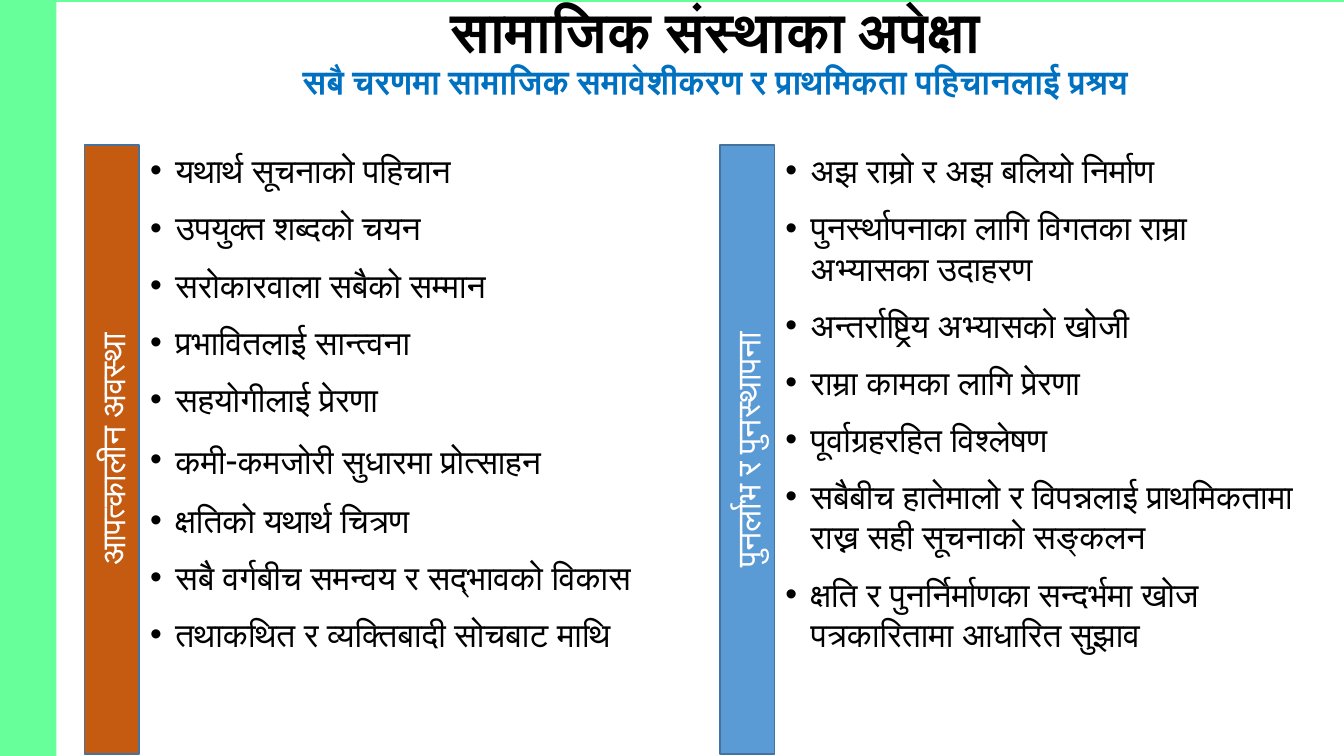
from lxml import etree
from pptx import Presentation
from pptx.dml.color import RGBColor
from pptx.enum import shapes, text
from pptx.oxml import ns
from pptx.util import Inches, Pt

COLORS = {
    "green": "66FF99",
    "orange": "C55A11",
    "blue": "5B9BD5",
    "outline": "43739E",
    "subtitle": "0070C0",
    "black": "000000",
    "white": "FFFFFF",
}
SLIDE_WIDTH, SLIDE_HEIGHT = 13.33, 7.5
BAR_WIDTH = 0.54
COLUMN_TOP, COLUMN_HEIGHT = 1.44, 6.04

EMERGENCY = [
    "यथार्थ सूचनाको पहिचान",
    "उपयुक्त शब्दको चयन",
    "सरोकारवाला सबैको सम्मान",
    "प्रभावितलाई सान्त्वना",
    "सहयोगीलाई प्रेरणा",
    "कमी-कमजोरी सुधारमा प्रोत्साहन",
    "क्षतिको यथार्थ चित्रण",
    "सबै वर्गबीच समन्वय र सद्भावको विकास",
    "तथाकथित र व्यक्तिबादी सोचबाट माथि",
]
RECOVERY = [
    "अझ राम्रो र अझ बलियो निर्माण",
    "पुनर्स्थापनाका लागि विगतका राम्रा अभ्यासका उदाहरण",
    "अन्तर्राष्ट्रिय अभ्यासको खोजी",
    "राम्रा कामका लागि प्रेरणा",
    "पूर्वाग्रहरहित विश्लेषण",
    "सबैबीच हातेमालो र विपन्नलाई प्राथमिकतामा राख्न सही सूचनाको सङ्कलन",
    "क्षति र पुनर्निर्माणका सन्दर्भमा खोज पत्रकारितामा आधारित सुझाव",
]


def color(name):
    return RGBColor.from_string(COLORS[name])


def place(shape, left, top, width, height):
    shape.left, shape.top = Inches(left), Inches(top)
    shape.width, shape.height = Inches(width), Inches(height)


def add_span(para, words, size, font, tint, bold=False):
    span = para.add_run()
    span.text = words
    span.font.size = Pt(size)
    span.font.name = font
    span.font.bold = bold
    span.font.color.rgb = color(tint)
    script_font = etree.SubElement(span.font._element, ns.qn("a:cs"))
    script_font.set("typeface", font)


def add_block(page, left, top, width, height, fill):
    block = page.shapes.add_shape(
        shapes.MSO_SHAPE.RECTANGLE,
        Inches(left), Inches(top), Inches(width), Inches(height),
    )
    block.shadow.inherit = False
    block.fill.solid()
    block.fill.fore_color.rgb = color(fill)
    block.line.fill.background()
    return block


def add_frame(page):
    add_block(page, 0, 0, 0.56, SLIDE_HEIGHT, "green")
    add_block(page, 0, 0, SLIDE_WIDTH, 0.02, "green")


def add_heading(page, left, top, width, height):
    heading = page.shapes.title
    place(heading, left, top, width, height)
    frame = heading.text_frame
    frame.word_wrap = True
    frame.auto_size = text.MSO_AUTO_SIZE.NONE
    frame.vertical_anchor = text.MSO_ANCHOR.MIDDLE
    para = frame.paragraphs[0]
    para.alignment = text.PP_ALIGN.CENTER
    para.line_spacing = 0.9
    add_span(para, "सामाजिक संस्थाका अपेक्षा", 40, "Lato", "black", True)
    para.add_line_break()
    add_span(para, "सबै चरणमा सामाजिक समावेशीकरण र प्राथमिकता पहिचानलाई प्रश्रय",
             24, "Lato", "subtitle", True)


def add_side_bar(page, left, top, width, height, label, fill):
    bar = add_block(page, left + (width - height) / 2, top + (height - width) / 2,
                    height, width, fill)
    bar.rotation = 270
    bar.line.color.rgb = color("outline")
    bar.line.width = Pt(1)
    bar.text_frame.vertical_anchor = text.MSO_ANCHOR.MIDDLE
    para = bar.text_frame.paragraphs[0]
    para.alignment = text.PP_ALIGN.CENTER
    add_span(para, label, 24, "Calibri", "white")


def add_bullet(para):
    properties = para._p.get_or_add_pPr()
    properties.set("marL", str(Inches(0.25)))
    properties.set("indent", str(-Inches(0.25)))
    font = etree.SubElement(properties, ns.qn("a:buFont"))
    font.set("typeface", "Arial")
    bullet = etree.SubElement(properties, ns.qn("a:buChar"))
    bullet.set("char", "•")


def fill_list(body, left, top, width, height, items):
    place(body, left, top, width, height)
    frame = body.text_frame
    frame.word_wrap = True
    frame.auto_size = text.MSO_AUTO_SIZE.NONE
    frame.vertical_anchor = text.MSO_ANCHOR.TOP
    for number, item in enumerate(items):
        para = frame.add_paragraph() if number else frame.paragraphs[0]
        add_bullet(para)
        para.space_before = Pt(12 if number else 0)
        start, hyphen, rest = item.partition("-")
        add_span(para, start, 24, "Lato", "black")
        if hyphen:
            add_span(para, hyphen, 28, "Calibri", "black")
            add_span(para, rest, 24, "Lato", "black")


def add_column(page, body, left, width, label, fill, items):
    add_side_bar(page, left, COLUMN_TOP, BAR_WIDTH, COLUMN_HEIGHT, label, fill)
    fill_list(body, left + BAR_WIDTH + 0.01, COLUMN_TOP,
              width - BAR_WIDTH - 0.01, COLUMN_HEIGHT, items)


def main():
    deck = Presentation()
    deck.slide_width, deck.slide_height = Inches(SLIDE_WIDTH), Inches(SLIDE_HEIGHT)
    page = deck.slides.add_slide(deck.slide_layouts[3])
    add_frame(page)
    add_heading(page, 1.77, 0.15, 10.65, 0.75)
    add_column(page, page.placeholders[1], 0.84, 5.72,
               "आपत्कालीन अवस्था", "orange", EMERGENCY)
    add_column(page, page.placeholders[2], 7.14, 5.84,
               "पुनर्लाभ र पुनस्थापना", "blue", RECOVERY)
    deck.save("out.pptx")


if __name__ == "__main__":
    main()
